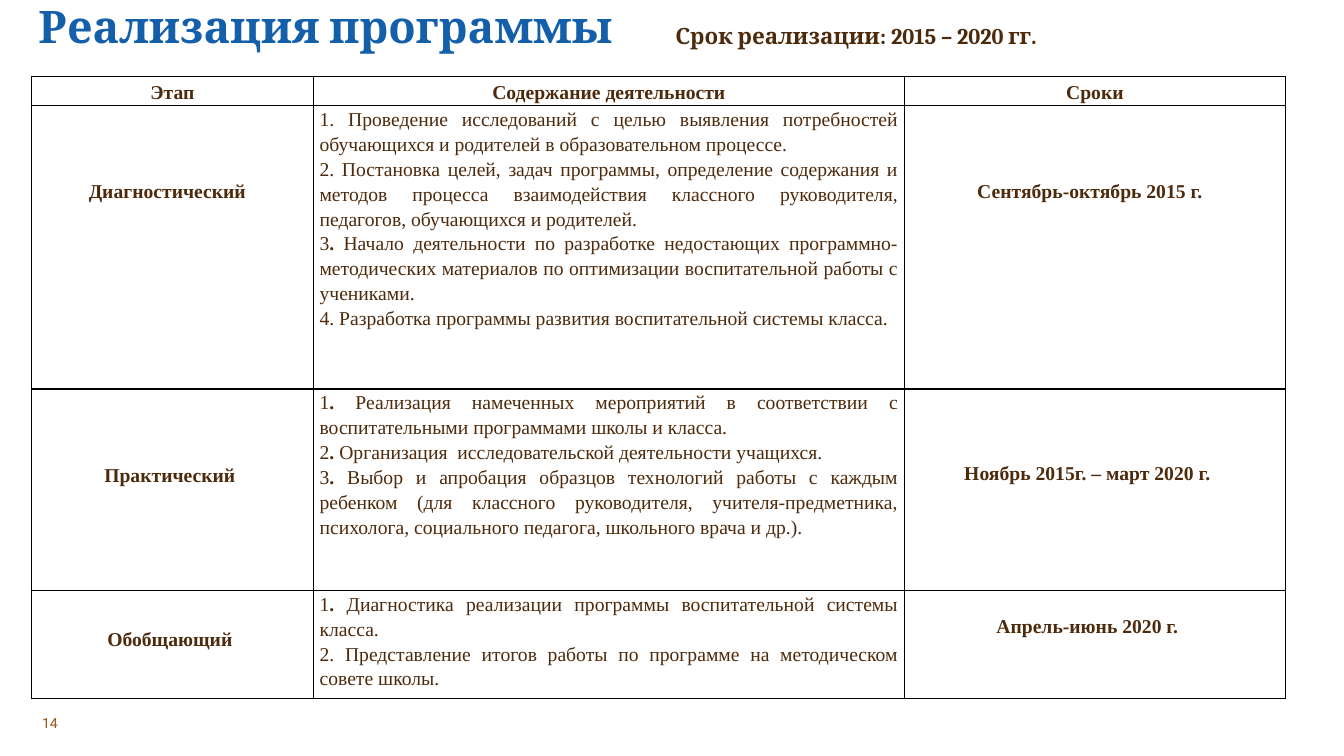
import pptx
import pptx.util
import pptx.dml.color
import pptx.enum.text
import pptx.oxml
import pptx.oxml.ns

Inches, Pt = pptx.util.Inches, pptx.util.Pt
ALIGN, ANCHOR = pptx.enum.text.PP_ALIGN, pptx.enum.text.MSO_ANCHOR
BROWN = "4D2A0B"
BLACK = "000000"


def style(span, font, size, color, bold):
    span.font.name = font
    span.font.size = Pt(size)
    span.font.bold = bold
    span.font.color.rgb = pptx.dml.color.RGBColor.from_string(color)


deck = pptx.Presentation()
deck.slide_width, deck.slide_height = Inches(13.33), Inches(7.5)
page = deck.slides.add_slide(deck.slide_layouts[6])

# Title, period and page number
labels = [
    ("Реализация программы", (-0.37, 0, 7.2, 1.19), "Cambria", 32, "145FAA", True, ALIGN.CENTER, ANCHOR.TOP, 0.9),
    ("Срок реализации: 2015 – 2020 гг.", (6.6, 0.17, 5.53, 0.54), "Cambria", 16, BROWN, True, ALIGN.LEFT, ANCHOR.TOP, 1),
    ("14", (0.32, 7.05, 0.83, 0.25), "Roboto", 10, "9A5315", False, ALIGN.LEFT, ANCHOR.MIDDLE, 1),
]
for text, place, font, size, color, bold, align, anchor, spacing in labels:
    box = page.shapes.add_textbox(*map(Inches, place))
    box.text_frame.word_wrap = True
    box.text_frame.vertical_anchor = anchor
    box.text_frame.text = text
    para = box.text_frame.paragraphs[0]
    para.alignment = align
    para.line_spacing = spacing
    style(para.runs[0], font, size, color, bold)

# Stages: each cell is (paragraphs, top inset, right inset); text between bars is bold
stages = [
    [(["|Этап"], 0, 0.06), (["|Содержание деятельности"], 0, 0.06), (["|Сроки"], 0, 0.06)],
    [
        (["|Диагностический"], 0.71, 0.16),
        ([
            "1. Проведение исследований с целью выявления потребностей обучающихся и родителей в образовательном процессе.",
            "2. Постановка целей, задач программы, определение содержания и методов процесса взаимодействия классного руководителя, педагогов, обучающихся и родителей.",
            "3|.| Начало деятельности по разработке недостающих программно-методических материалов по оптимизации воспитательной работы с учениками.",
            "4. Разработка программы развития воспитательной системы класса.",
        ], 0, 0.06),
        (["|Сентябрь-октябрь 2015 г."], 0.71, 0.16),
    ],
    [
        (["|Практический"], 0.72, 0.11),
        ([
            "1|. |Реализация намеченных мероприятий в соответствии с воспитательными программами школы и класса.",
            "2|. |Организация  исследовательской деятельности учащихся.",
            "3|. |Выбор и апробация образцов технологий работы с каждым ребенком (для классного руководителя, учителя-предметника, психолога, социального педагога, школьного врача и др.).",
        ], 0, 0.06),
        (["|Ноябрь 2015г. – март 2020 г."], 0.7, 0.21),
    ],
    [
        (["|Обобщающий"], 0.35, 0.11),
        ([
            "1|. |Диагностика реализации программы воспитательной системы класса.",
            "2. Представление итогов работы по программе на методическом совете школы.",
        ], 0, 0.06),
        (["|Апрель-июнь 2020 г."], 0.22, 0.21),
    ],
]
widths = [2.8, 5.86, 3.78]
heights = [0.29, 2.81, 2, 1.03]

table = page.shapes.add_table(
    len(heights), len(widths), Inches(0.31), Inches(0.76), Inches(sum(widths)), Inches(sum(heights))
).table
table.first_row = table.horz_banding = False
for column, width in zip(table.columns, widths):
    column.width = Inches(width)
for row, height in zip(table.rows, heights):
    row.height = Inches(height)

for r, stage in enumerate(stages):
    for c, (lines, top, right) in enumerate(stage):
        cell = table.cell(r, c)
        cell.margin_left, cell.margin_right = Inches(0.06), Inches(right)
        cell.margin_top, cell.margin_bottom = Inches(top), 0
        cell.vertical_anchor = ANCHOR.MIDDLE if r == 0 else ANCHOR.TOP

        # Borders go before the fill in the cell properties
        properties = cell._tc.get_or_add_tcPr()
        for side in ("lnL", "lnR", "lnT", "lnB"):
            properties.append(pptx.oxml.parse_xml(
                f'<a:{side} {pptx.oxml.ns.nsdecls("a")} w="12700"><a:solidFill>'
                f'<a:srgbClr val="{BLACK}"/></a:solidFill></a:{side}>'
            ))
        cell.fill.background()

        # Cell text
        for i, line in enumerate(lines):
            para = cell.text_frame.paragraphs[0] if i == 0 else cell.text_frame.add_paragraph()
            para.alignment = ALIGN.JUSTIFY if r > 0 and c == 1 else ALIGN.CENTER
            para.line_spacing = 1.15
            for k, part in enumerate(line.split("|")):
                if part:
                    span = para.add_run()
                    span.text = part
                    style(span, "Times New Roman", 14, BROWN, k % 2 == 1)

deck.save("out.pptx")
